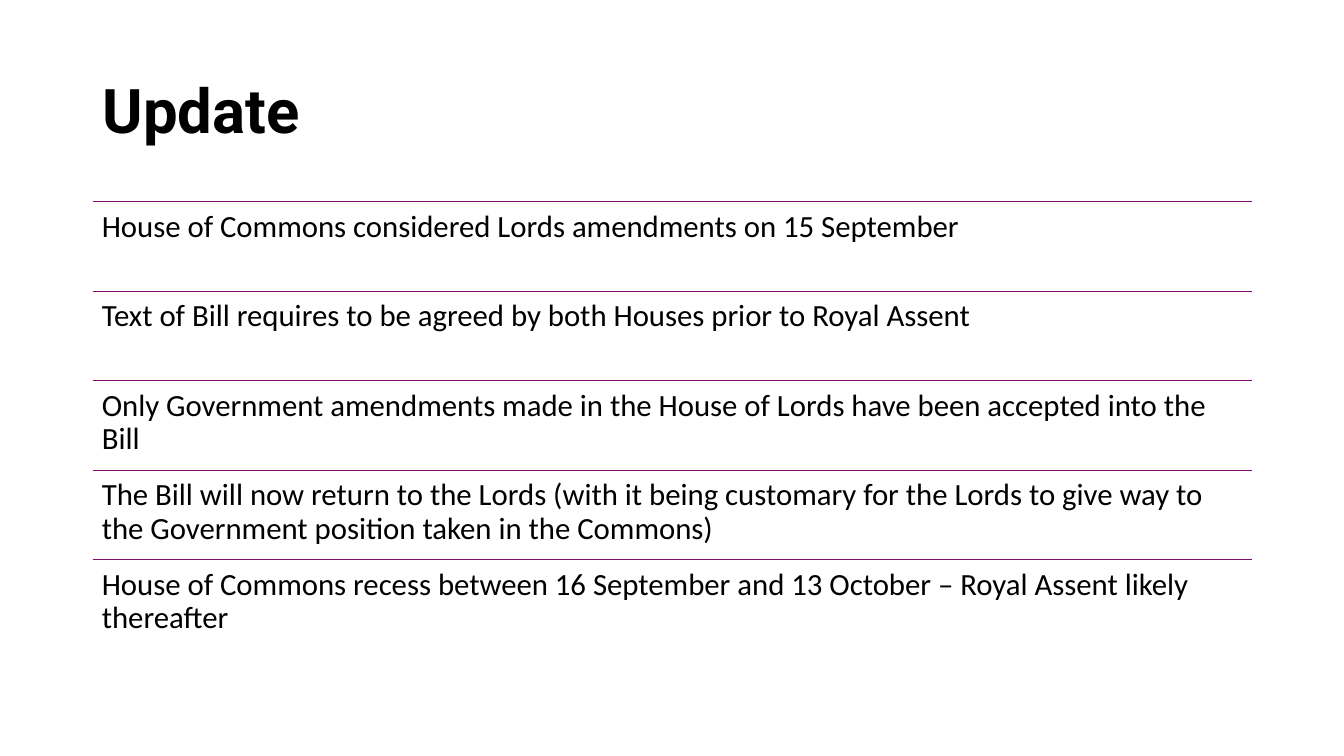
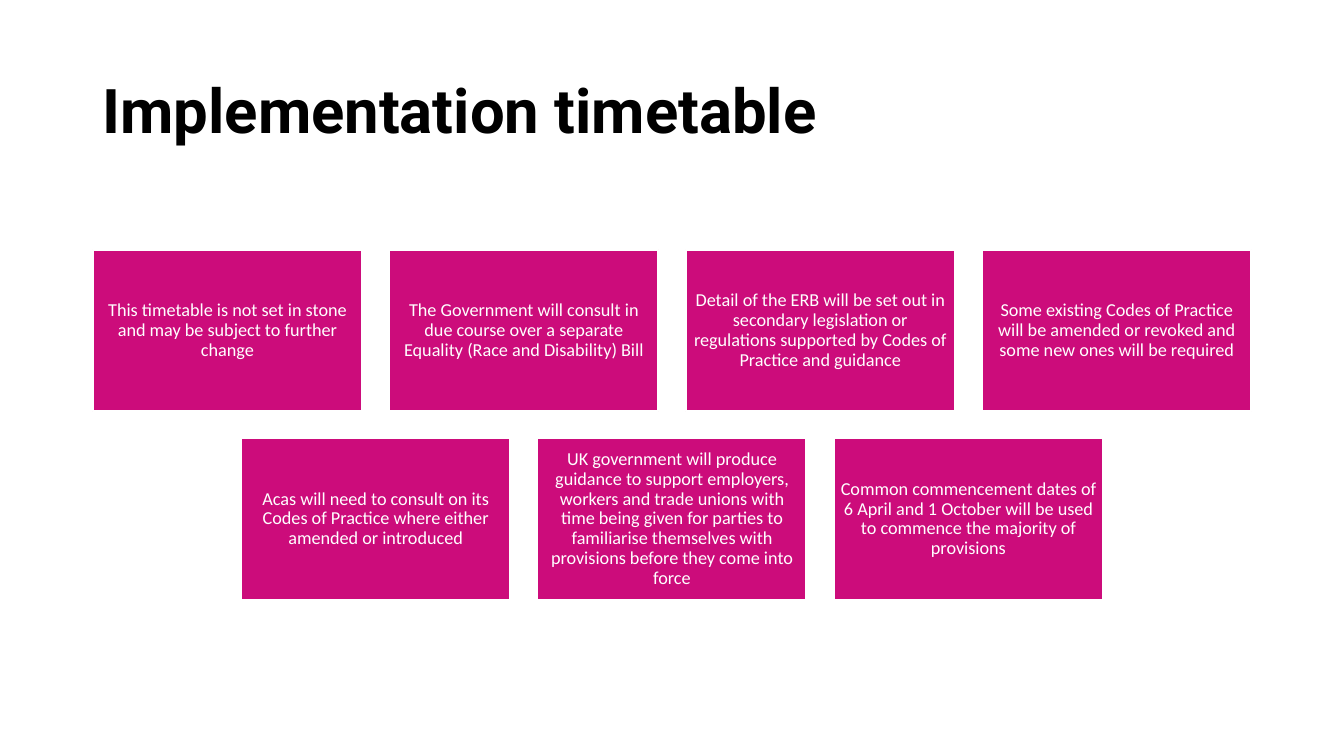
from lxml import etree
from pptx import Presentation
from pptx import util as u
from pptx.dml import color
from pptx.enum import shapes, text
from pptx.oxml import ns

SLIDE_WIDTH, SLIDE_HEIGHT = 13.33, 7.5
LEFT, CONTENT_WIDTH = 0.92, 11.5

UPDATES = [
    "House of Commons considered Lords amendments on 15 September",
    "Text of Bill requires to be agreed by both Houses prior to Royal Assent",
    "Only Government amendments made in the House of Lords have been accepted into the Bill",
    "The Bill will now return to the Lords (with it being customary for the Lords "
    "to give way to the Government position taken in the Commons)",
    "House of Commons recess between 16 September and 13 October – Royal Assent likely thereafter",
]

TIMETABLE_ROWS = [
    [
        "This timetable is not set in stone and may be subject to further change",
        "The Government will consult in due course over a separate Equality (Race and Disability) Bill",
        "Detail of the ERB will be set out in secondary legislation or regulations "
        "supported by Codes of Practice and guidance",
        "Some existing Codes of Practice will be amended or revoked and some new ones will be required",
    ],
    [
        "Acas will need to consult on its Codes of Practice where either amended or introduced",
        "UK government will produce guidance to support employers, workers and trade unions "
        "with time being given for parties to familiarise themselves with provisions "
        "before they come into force",
        "Common commencement dates of 6 April and 1 October will be used "
        "to commence the majority of provisions",
    ],
]


def rgb(value):
    return color.RGBColor.from_string(value)


class Slides:
    TITLE_FONT, BODY_FONT = "Roboto", "Calibri"
    BLACK, WHITE = "000000", "FFFFFF"
    CARD, RULE = "CC0C7B", "7C0F6C"

    def __init__(self):
        self.deck = Presentation()
        self.deck.slide_width = u.Inches(SLIDE_WIDTH)
        self.deck.slide_height = u.Inches(SLIDE_HEIGHT)
        self.slide = None

    def new_slide(self, title):
        self.slide = self.deck.slides.add_slide(self.deck.slide_layouts[6])
        self.text_box(title, LEFT, 0.4, CONTENT_WIDTH, 1.45, 44, self.TITLE_FONT,
                      bold=True, anchor=text.MSO_ANCHOR.MIDDLE, insets=(0.1, 0.05))

    def set_text(self, box, words, size, font, ink, bold=False,
                 anchor=text.MSO_ANCHOR.TOP, align=text.PP_ALIGN.LEFT, insets=(0.09, 0.09)):
        frame = box.text_frame
        frame.word_wrap = True
        frame.vertical_anchor = anchor
        frame.margin_left = frame.margin_right = u.Inches(insets[0])
        frame.margin_top = frame.margin_bottom = u.Inches(insets[1])
        para = frame.paragraphs[0]
        para.alignment = align
        para.line_spacing = 0.9
        span = para.add_run()
        span.text = words
        span.font.name = font
        span.font.size = u.Pt(size)
        span.font.bold = bold
        span.font.color.rgb = rgb(ink)

    def text_box(self, words, left, top, width, height, size, font, **style):
        box = self.slide.shapes.add_textbox(
            u.Inches(left), u.Inches(top), u.Inches(width), u.Inches(height))
        self.set_text(box, words, size, font, self.BLACK, **style)

    def rule(self, left, top, width):
        line = self.slide.shapes.add_connector(
            shapes.MSO_CONNECTOR.STRAIGHT, u.Inches(left), u.Inches(top),
            u.Inches(left + width), u.Inches(top))
        line.line.color.rgb = rgb(self.RULE)
        line.line.width = u.Pt(0.5)
        etree.SubElement(line._element.spPr, ns.qn("a:effectLst"))

    def card(self, words, left, top, width, height):
        box = self.slide.shapes.add_shape(
            shapes.MSO_SHAPE.RECTANGLE, u.Inches(left), u.Inches(top),
            u.Inches(width), u.Inches(height))
        box.shadow.inherit = False
        box.fill.solid()
        box.fill.fore_color.rgb = rgb(self.CARD)
        box.line.color.rgb = rgb(self.WHITE)
        box.line.width = u.Pt(1.5)
        self.set_text(box, words, 13, self.BODY_FONT, self.WHITE,
                      anchor=text.MSO_ANCHOR.MIDDLE, align=text.PP_ALIGN.CENTER,
                      insets=(0.05, 0.05))


def build_update(slides):
    slides.new_slide("Update")
    first_top, last_bottom = 2, 6.44
    height = (last_bottom - first_top) / len(UPDATES)
    for index, words in enumerate(UPDATES):
        top = first_top + index * height
        slides.rule(LEFT, top, CONTENT_WIDTH)
        slides.text_box(words, LEFT, top, CONTENT_WIDTH, height, 22, slides.BODY_FONT)


def build_timetable(slides):
    slides.new_slide("Implementation timetable")
    width, height, gap, first_top = 2.67, 1.6, 0.27, 2.48
    for row, cards in enumerate(TIMETABLE_ROWS):
        row_width = len(cards) * (width + gap) - gap
        left = (SLIDE_WIDTH - row_width) / 2
        for column, words in enumerate(cards):
            slides.card(words, left + column * (width + gap),
                        first_top + row * (height + gap), width, height)


def main():
    slides = Slides()
    build_update(slides)
    build_timetable(slides)
    slides.deck.save("out.pptx")


if __name__ == "__main__":
    main()
